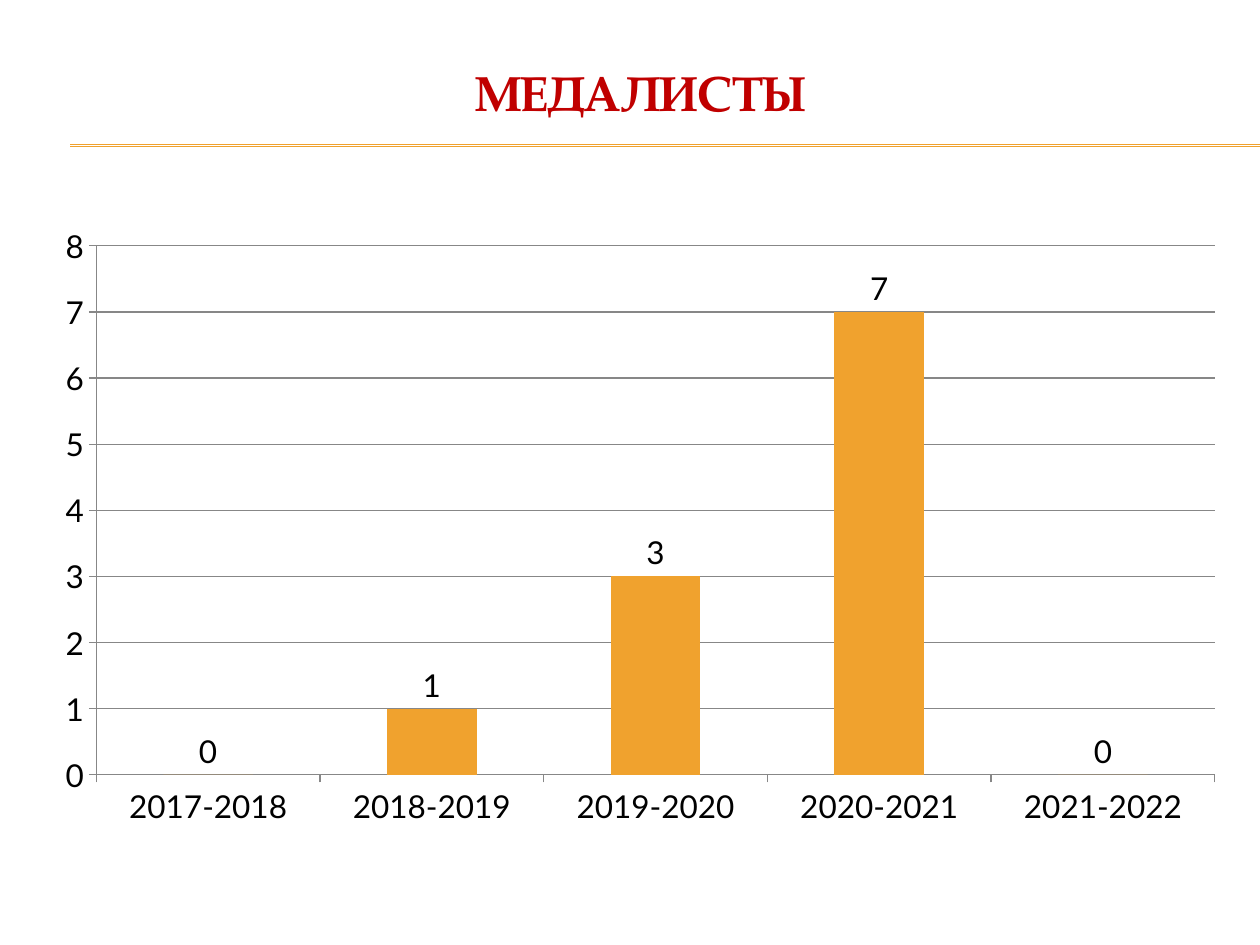
from lxml import etree
from pptx import Presentation
from pptx.chart.data import CategoryChartData
from pptx.dml.color import RGBColor
from pptx.enum.chart import XL_CHART_TYPE as ChartType, XL_LABEL_POSITION as LabelPosition
from pptx.enum.chart import XL_TICK_MARK as TickMark
from pptx.enum.shapes import MSO_CONNECTOR as Connector
from pptx.enum.text import MSO_ANCHOR as Anchor, PP_ALIGN as Align
from pptx.oxml.ns import qn
from pptx.util import Cm, Pt

ORANGE, RED, BLACK, GREY = "F0A22E", "C00000", "000000", "878787"
LEFT, WIDTH = Cm(0.84), Cm(24.13)
MEDALISTS = {
    "2017-2018": 0,
    "2018-2019": 1,
    "2019-2020": 3,
    "2020-2021": 7,
    "2021-2022": 0,
}


def color(hex_value):
    return RGBColor.from_string(hex_value)


def style_line(line, hex_value):
    line.color.rgb = color(hex_value)
    line.width = Pt(0.75)


def add_rule(page, top, right):
    rule = page.shapes.add_connector(Connector.STRAIGHT, Cm(1.42), top, right, top)
    style_line(rule.line, ORANGE)
    etree.SubElement(rule._element.spPr, qn("a:effectLst"))


def add_title(page, text):
    box = page.shapes.add_textbox(LEFT, Cm(1.27), WIDTH, Cm(2.34))
    frame = box.text_frame
    frame.word_wrap = True
    frame.vertical_anchor = Anchor.TOP
    frame.margin_top = 0
    para = frame.paragraphs[0]
    para.alignment = Align.CENTER
    span = para.add_run()
    span.text = text
    span.font.name = "TeX Gyre Pagella"
    span.font.size = Pt(28)
    span.font.bold = True
    span.font.color.rgb = color(RED)


def add_column_chart(page, values):
    data = CategoryChartData()
    data.categories = list(values)
    data.add_series("Series 1", list(values.values()))
    chart = page.shapes.add_chart(
        ChartType.COLUMN_CLUSTERED, LEFT, Cm(4.32), WIDTH, Cm(12.57), data
    ).chart
    chart.has_title = False
    chart.has_legend = False
    chart.font.name = "Lato"
    chart.font.size = Pt(18)
    chart.font.color.rgb = color(BLACK)

    # Columns and their values
    plot = chart.plots[0]
    plot.vary_by_categories = False
    plot.gap_width = 150
    fill = plot.series[0].format.fill
    fill.solid()
    fill.fore_color.rgb = color(ORANGE)
    plot.has_data_labels = True
    plot.data_labels.show_value = True
    plot.data_labels.position = LabelPosition.OUTSIDE_END

    # Axes and gridlines
    for axis in (chart.category_axis, chart.value_axis):
        axis.major_tick_mark = TickMark.OUTSIDE
        style_line(axis.format.line, GREY)
    scale = chart.value_axis
    scale.minimum_scale, scale.maximum_scale, scale.major_unit = 0, 8, 1
    scale.has_major_gridlines = True
    style_line(scale.major_gridlines.format.line, GREY)


def main():
    deck = Presentation()
    deck.slide_width, deck.slide_height = Cm(25.4), Cm(19.05)
    page = deck.slides.add_slide(deck.slide_layouts[6])

    # Double rule under the heading
    for top in (Cm(2.92), Cm(2.95)):
        add_rule(page, top, deck.slide_width)

    add_title(page, "МЕДАЛИСТЫ")
    add_column_chart(page, MEDALISTS)
    deck.save("out.pptx")


if __name__ == "__main__":
    main()
